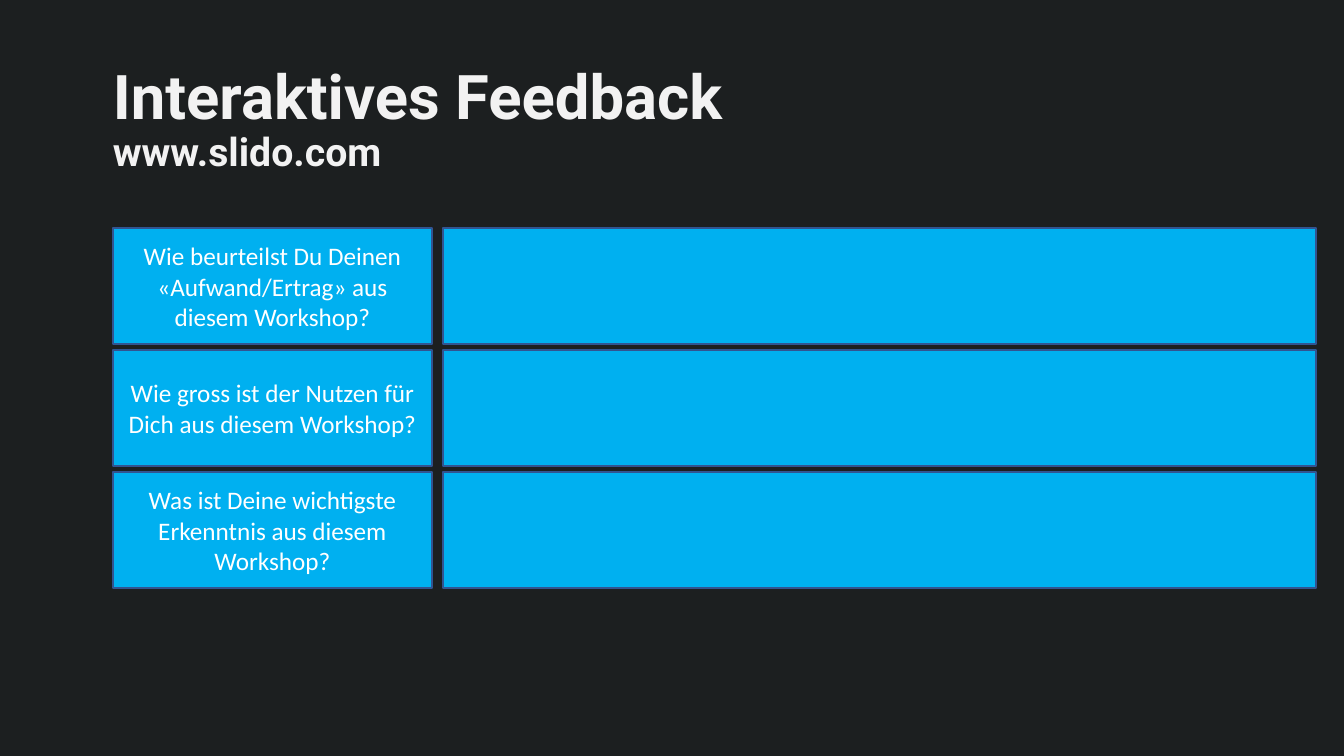
from pptx import Presentation
from pptx.dml.color import RGBColor
from pptx.enum.shapes import MSO_SHAPE
from pptx.enum.text import MSO_ANCHOR, MSO_AUTO_SIZE, PP_ALIGN
from pptx.util import Pt

EMU_PER_PX = 914400 / 100.8
COLORS = {
    "background": "1C1F20",
    "title": "F2F2F2",
    "box": "00B0F0",
    "border": "325491",
    "question": "FFFFFF",
}


def px(length):
    return round(length * EMU_PER_PX)


def write(paragraph, text, font, size, color, bold=False):
    run = paragraph.add_run()
    run.text = text
    run.font.name = font
    run.font.size = Pt(size)
    run.font.bold = bold
    run.font.color.rgb = RGBColor.from_string(COLORS[color])


presentation = Presentation()
presentation.slide_width = px(1344)
presentation.slide_height = px(756)
slide = presentation.slides.add_slide(presentation.slide_layouts[5])
slide.background.fill.solid()
slide.background.fill.fore_color.rgb = RGBColor.from_string(COLORS["background"])

# Title with web address
title = slide.shapes.title
title.left, title.top, title.width, title.height = px(113), px(6), px(1113), px(169)
title_frame = title.text_frame
title_frame.word_wrap = True
title_frame.auto_size = MSO_AUTO_SIZE.NONE
title_frame.vertical_anchor = MSO_ANCHOR.BOTTOM
title_frame.margin_left = title_frame.margin_right = 0
title_frame.margin_top = title_frame.margin_bottom = 0
heading = title_frame.paragraphs[0]
heading.alignment = PP_ALIGN.LEFT
heading.line_spacing = 0.9
write(heading, "Interaktives Feedback", font="Roboto", size=44, color="title", bold=True)
heading.add_line_break()
write(heading, "www.slido.com", font="Roboto", size=28, color="title", bold=True)

# One row per question: answer field on the right, question on the left
QUESTIONS = [
    "Wie beurteilst Du Deinen «Aufwand/Ertrag» aus diesem Workshop?",
    "Wie gross ist der Nutzen für Dich aus diesem Workshop?",
    "Was ist Deine wichtigste Erkenntnis aus diesem Workshop?",
]
FIRST_ROW_TOP, ROW_HEIGHT, ROW_PITCH = 228, 116, 122

for row, question in enumerate(QUESTIONS):
    top = FIRST_ROW_TOP + row * ROW_PITCH
    for left, width, text in [(443, 873, ""), (113, 319, question)]:
        box = slide.shapes.add_shape(
            MSO_SHAPE.RECTANGLE, px(left), px(top), px(width), px(ROW_HEIGHT)
        )
        box.shadow.inherit = False
        box.fill.solid()
        box.fill.fore_color.rgb = RGBColor.from_string(COLORS["box"])
        box.line.color.rgb = RGBColor.from_string(COLORS["border"])
        box.line.width = Pt(1)
        if text:
            box.text_frame.word_wrap = True
            box.text_frame.vertical_anchor = MSO_ANCHOR.MIDDLE
            label = box.text_frame.paragraphs[0]
            label.alignment = PP_ALIGN.CENTER
            write(label, text, font="Calibri", size=18, color="question")

presentation.save("out.pptx")
